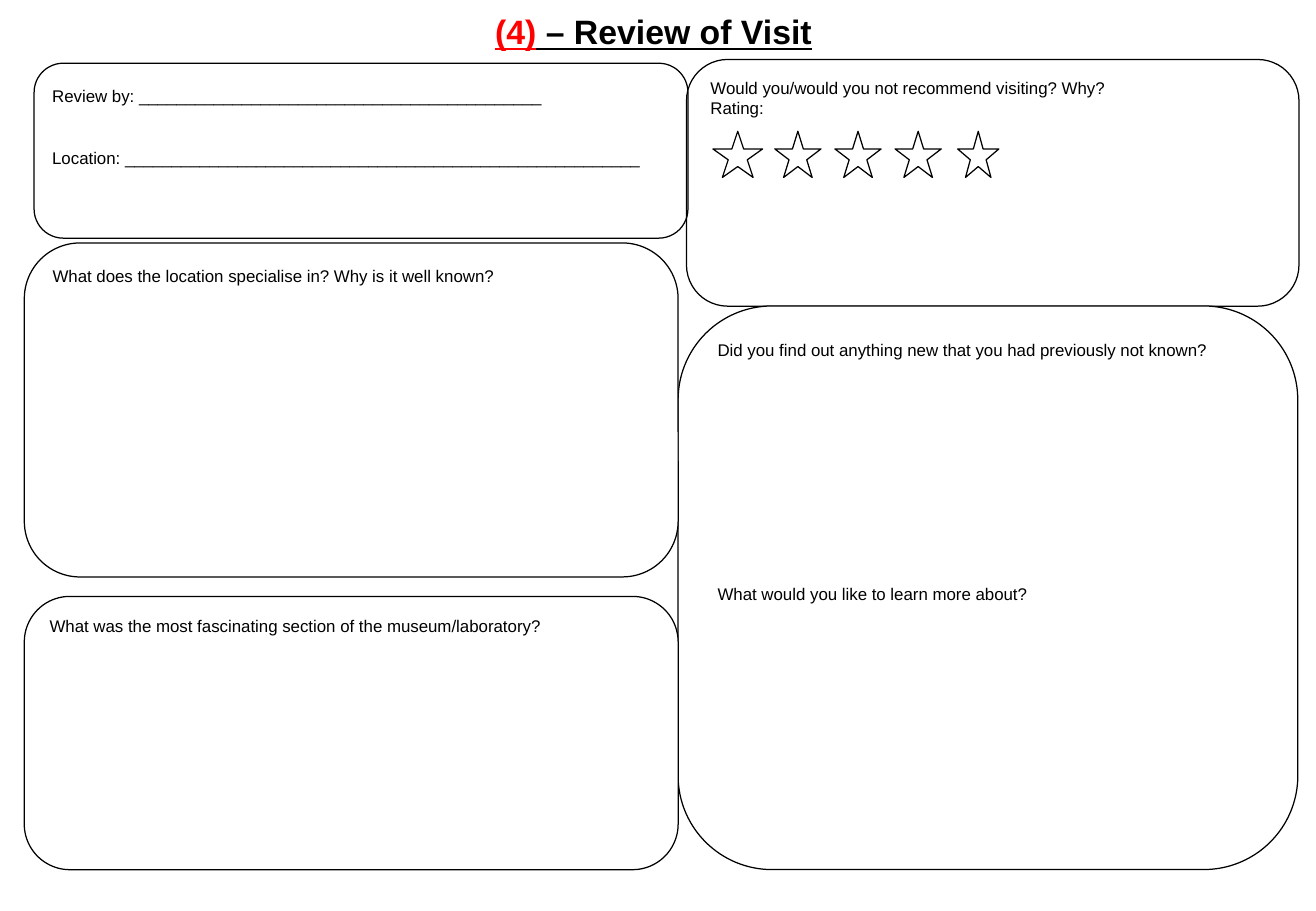
from dataclasses import dataclass

from pptx import Presentation
from pptx.dml.color import RGBColor
from pptx.enum import shapes, text
from pptx.util import Pt


@dataclass(frozen=True)
class Theme:
    font: str = "Arial"
    ink: RGBColor = RGBColor(0, 0, 0)
    accent: RGBColor = RGBColor(255, 0, 0)
    paper: RGBColor = RGBColor(255, 255, 255)
    title_size: float = 20
    body_size: float = 10
    line_width: float = 0.75


THEME = Theme()
PANEL = shapes.MSO_SHAPE.FLOWCHART_ALTERNATE_PROCESS
STAR = shapes.MSO_SHAPE.STAR_5_POINT


def add_run(p, words, size=THEME.body_size, color=THEME.ink, **extra):
    r = p.add_run()
    r.text = words
    r.font.color.rgb = color
    for name, value in dict(name=THEME.font, size=Pt(size), **extra).items():
        setattr(r.font, name, value)


def add_lines(sp, lines, gap=0):
    """Write left-aligned paragraphs from the top, with gap points between them."""
    tf = sp.text_frame
    tf.word_wrap = True
    tf.vertical_anchor = text.MSO_ANCHOR.TOP
    for i, words in enumerate(lines):
        p = tf.paragraphs[0] if i == 0 else tf.add_paragraph()
        p.alignment = text.PP_ALIGN.LEFT
        p.space_before = Pt(gap if i else 0)
        add_run(p, words)


def add_outlined(s, kind, box, filled=True):
    sp = s.shapes.add_shape(kind, *map(Pt, box))
    sp.shadow.inherit = False
    if filled:
        sp.fill.solid()
        sp.fill.fore_color.rgb = THEME.paper
    else:
        sp.fill.background()
    sp.line.color.rgb = THEME.ink
    sp.line.width = Pt(THEME.line_width)
    return sp


def place_title(s, box):
    sp = s.shapes.title
    for name, value in zip(("left", "top", "width", "height"), box):
        setattr(sp, name, Pt(value))
    sp.fill.solid()
    sp.fill.fore_color.rgb = THEME.paper
    tf = sp.text_frame
    tf.auto_size = text.MSO_AUTO_SIZE.NONE
    tf.vertical_anchor = text.MSO_ANCHOR.TOP
    p = tf.paragraphs[0]
    p.alignment = text.PP_ALIGN.CENTER
    for words, color in (("(4)", THEME.accent), (" – Review of Visit", THEME.ink)):
        add_run(p, words, THEME.title_size, color, bold=True, underline=True)


def question_panel(s, box, lines, gap=0):
    add_lines(add_outlined(s, PANEL, box), lines, gap)


def visitor_panel(s, box):
    left, top, width, height = box
    add_outlined(s, PANEL, box, filled=False)
    sp = s.shapes.add_textbox(Pt(left + 3.6), Pt(top + 10), Pt(width - 9.4), Pt(height - 29.5))
    sp.fill.solid()
    sp.fill.fore_color.rgb = THEME.paper
    add_lines(sp, ["Review by: " + "_" * 43, "Location: " + "_" * 55], gap=24.5)


def rating_stars(s, box):
    # Star centres are evenly spaced; the outer two differ slightly in width
    left, top, width, height = box
    widths = (29.5, 27.4, 27.4, 27.4, 24.5)
    step = (width - (widths[0] + widths[-1]) / 2) / (len(widths) - 1)
    for i, star_width in enumerate(widths):
        center = left + widths[0] / 2 + i * step
        add_outlined(s, STAR, (center - star_width / 2, top, star_width, height))


def review_slide(prs):
    s = prs.slides.add_slide(prs.slide_layouts[5])
    place_title(s, (106.5, 3, 561.6, 28.8))

    # Right column
    question_panel(s, (406.8, 35.3, 362.9, 146.2),
                   ["Would you/would you not recommend visiting? Why?", "Rating:"])
    question_panel(s, (401.8, 181.4, 367.2, 334.1),
                   ["Did you find out anything new that you had previously not known?",
                    "What would you like to learn more about?"], gap=132.5)

    # Left column
    question_panel(s, (14.4, 353.5, 387.4, 162),
                   ["What was the most fascinating section of the museum/laboratory?"])
    question_panel(s, (14.4, 144, 387.4, 198),
                   ["What does the location specialise in? Why is it well known?"])
    visitor_panel(s, (20.2, 37.5, 387.4, 103.7))

    # Rating, over the recommendation panel
    rating_stars(s, (422.4, 77.8, 169.5, 27.4))


def main():
    prs = Presentation()
    prs.slide_width, prs.slide_height = Pt(779.76), Pt(540)
    review_slide(prs)
    prs.save("out.pptx")


if __name__ == "__main__":
    main()
